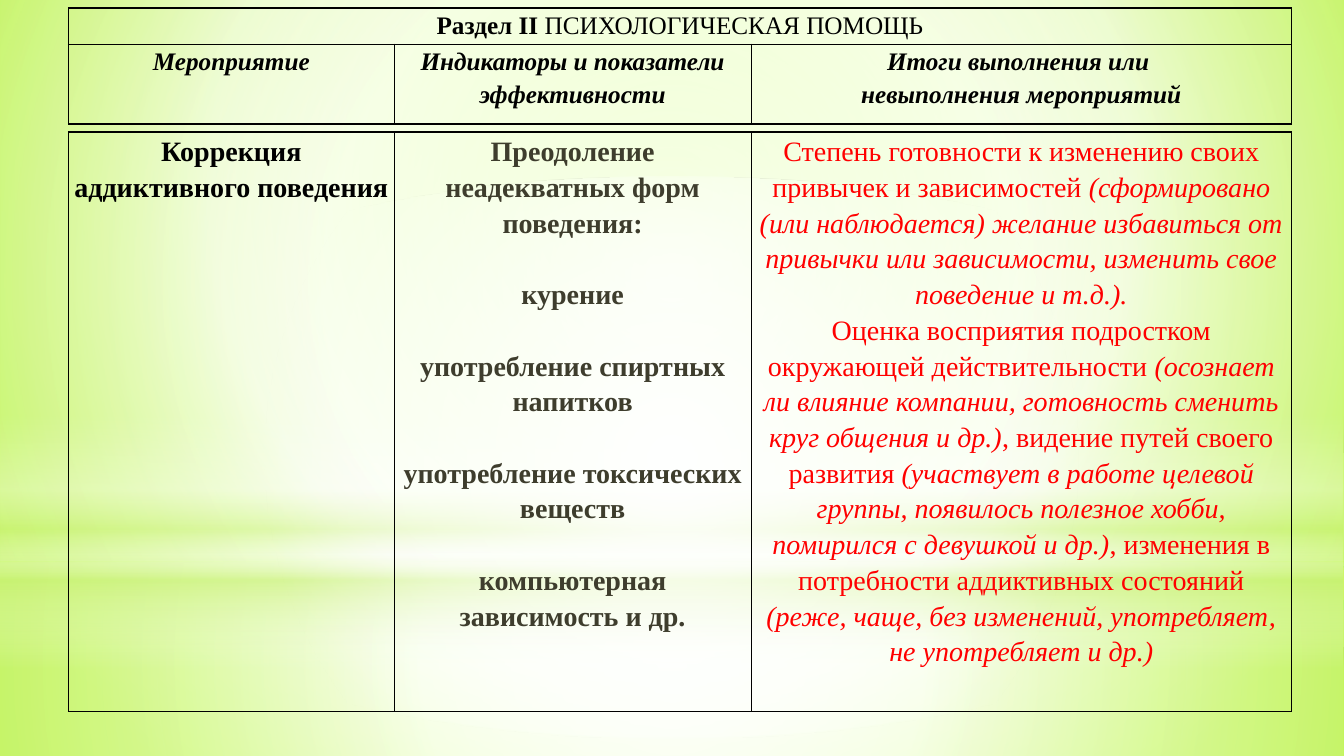
from lxml import etree
from pptx import Presentation
from pptx.dml.color import RGBColor
from pptx.enum import shapes, text
from pptx.oxml.ns import qn
from pptx.util import Inches, Pt

BLACK = RGBColor(0x00, 0x00, 0x00)
OLIVE = RGBColor(0x3E, 0x3D, 0x2D)
RED = RGBColor(0xFF, 0x00, 0x00)
WHITE = RGBColor(0xFF, 0xFF, 0xFF)
LIME = RGBColor(0xCA, 0xF2, 0x78)
FONT = "Times New Roman"

# A run is (text, style), where style holds "b" for bold and "i" for italic.
HEADER_ROWS = [
    [[[("Раздел II ", "b"), ("ПСИХОЛОГИЧЕСКАЯ ПОМОЩЬ", "")]]],
    [
        [[("Мероприятие", "bi")]],
        [[("Индикаторы и показатели эффективности", "bi")]],
        [[("Итоги выполнения или ", "bi")], [("невыполнения мероприятий", "bi")]],
    ],
]
ACTIVITY = [[("Коррекция аддиктивного поведения", "b")]]
INDICATORS = [
    [("Преодоление неадекватных форм поведения:", "b")],
    [("курение", "b")],
    [("употребление спиртных напитков", "b")],
    [("употребление токсических веществ", "b")],
    [("компьютерная зависимость и др.", "b")],
]
RESULTS = [
    [
        ("Степень готовности к изменению своих привычек и зависимостей ", ""),
        ("(сформировано (или наблюдается) желание избавиться от привычки или "
         "зависимости, изменить свое поведение и т.д.).", "i"),
    ],
    [
        ("Оценка восприятия подростком окружающей действительности ", ""),
        ("(осознает ли влияние компании, готовность сменить круг общения и др.)", "i"),
        (", видение путей своего развития ", ""),
        ("(участвует в работе целевой группы, появилось полезное хобби, "
         "помирился с девушкой и др.)", "i"),
        (", изменения в потребности аддиктивных состояний ", ""),
        ("(реже, чаще, без изменений, употребляет, не употребляет и др.)", "i"),
    ],
]

TABLE_LEFT = 0.68
COLUMNS = [3.23, 3.54, 5.36]
HEADER_TOP, HEADER_HEIGHTS = 0.08, [0.36, 0.79]
BODY_TOP, BODY_HEIGHTS = 1.31, [5.75]
BLANK_LINE = 25.5  # points, one line of body text

# Gradient stops are (position %, colour, opacity %).
BACKDROP = [(0, RGBColor(0xCA, 0xFF, 0x60), 100), (60, RGBColor(0xF7, 0xFF, 0xE7), 100),
            (100, RGBColor(0xB7, 0xFF, 0x29), 100)]
CENTRE = (50, 50, 50, 50)
RECT, OVAL = shapes.MSO_SHAPE.RECTANGLE, shapes.MSO_SHAPE.OVAL
# Glow layers: preset, top, height, circle focus (None means top to bottom), stops.
GLOWS = [
    (RECT, 5.58, 1.92, CENTRE, [(0, WHITE, 91), (37, WHITE, 76), (100, LIME, 79)]),
    (RECT, 0, 5.58, CENTRE, [(0, WHITE, 89), (48, WHITE, 62), (100, LIME, 79)]),
    (RECT, 4.12, 2.5, None, [(0, WHITE, 0), (29, WHITE, 30), (45, LIME, 40),
                             (55, WHITE, 26), (65, LIME, 60), (100, WHITE, 0)]),
    (OVAL, 1.75, 5.58, CENTRE, [(0, WHITE, 100), (56, WHITE, 0)]),
]


def add_xml(parent, tag, **attributes):
    return etree.SubElement(parent, qn(tag), {k: str(v) for k, v in attributes.items()})


def set_gradient(fill, element, stops, focus):
    fill.gradient()
    gradient = element.find(".//" + qn("a:gradFill"))
    gradient.clear()
    gradient.set("rotWithShape", "1")
    stop_list = add_xml(gradient, "a:gsLst")
    for position, colour, opacity in stops:
        stop = add_xml(stop_list, "a:gs", pos=position * 1000)
        tint = add_xml(stop, "a:srgbClr", val=colour)
        if opacity < 100:
            add_xml(tint, "a:alpha", val=opacity * 1000)
    if focus:
        circle = add_xml(gradient, "a:path", path="circle")
        add_xml(circle, "a:fillToRect", **{side: v * 1000 for side, v in zip("ltrb", focus)})
    else:
        add_xml(gradient, "a:lin", ang=90 * 60000, scaled=0)


def format_cell(cell, margin):
    cell.margin_left = cell.margin_right = Inches(margin)
    cell.margin_top = cell.margin_bottom = 0
    properties = cell._tc.get_or_add_tcPr()
    for side in "LRTB":
        border = add_xml(properties, "a:ln" + side, w=Pt(1))
        add_xml(add_xml(border, "a:solidFill"), "a:srgbClr", val=BLACK)
    cell.fill.background()


def write_cell(cell, paragraphs, size, colour, gap=0):
    frame = cell.text_frame
    for index, runs in enumerate(paragraphs):
        paragraph = frame.add_paragraph() if index else frame.paragraphs[0]
        paragraph.alignment = text.PP_ALIGN.CENTER
        paragraph.line_spacing = 1.15
        paragraph.space_before = Pt(gap if index else 0)
        for words, style in runs:
            run = paragraph.add_run()
            run.text = words
            run.font.name, run.font.size = FONT, Pt(size)
            run.font.bold, run.font.italic = "b" in style, "i" in style
            run.font.color.rgb = colour


def add_grid(slide, top, heights, margin):
    grid = slide.shapes.add_table(
        len(heights), len(COLUMNS), Inches(TABLE_LEFT), Inches(top),
        Inches(sum(COLUMNS)), Inches(sum(heights))).table
    grid.first_row = grid.horz_banding = False
    for column, width in zip(grid.columns, COLUMNS):
        column.width = Inches(width)
    for row, height in zip(grid.rows, heights):
        row.height = Inches(height)
        for cell in row.cells:
            format_cell(cell, margin)
    return grid


def main():
    deck = Presentation()
    deck.slide_width, deck.slide_height = Inches(13.33), Inches(7.5)
    slide = deck.slides.add_slide(deck.slide_layouts[6])
    set_gradient(slide.background.fill, slide.element, BACKDROP, (20, 10, 20, 60))
    for preset, top, height, focus, stops in GLOWS:
        glow = slide.shapes.add_shape(preset, 0, Inches(top), deck.slide_width, Inches(height))
        glow.shadow.inherit = False
        glow.line.fill.background()
        set_gradient(glow.fill, glow.element, stops, focus)

    body = add_grid(slide, BODY_TOP, BODY_HEIGHTS, 0.05)
    write_cell(body.cell(0, 0), ACTIVITY, 20, BLACK)
    write_cell(body.cell(0, 1), INDICATORS, 20, OLIVE, BLANK_LINE)
    write_cell(body.cell(0, 2), RESULTS, 20, RED)

    header = add_grid(slide, HEADER_TOP, HEADER_HEIGHTS, 0.07)
    header.cell(0, 0).merge(header.cell(0, 2))
    for row, cells in enumerate(HEADER_ROWS):
        for column, paragraphs in enumerate(cells):
            write_cell(header.cell(row, column), paragraphs, 18, BLACK)
    deck.save("out.pptx")


if __name__ == "__main__":
    main()
